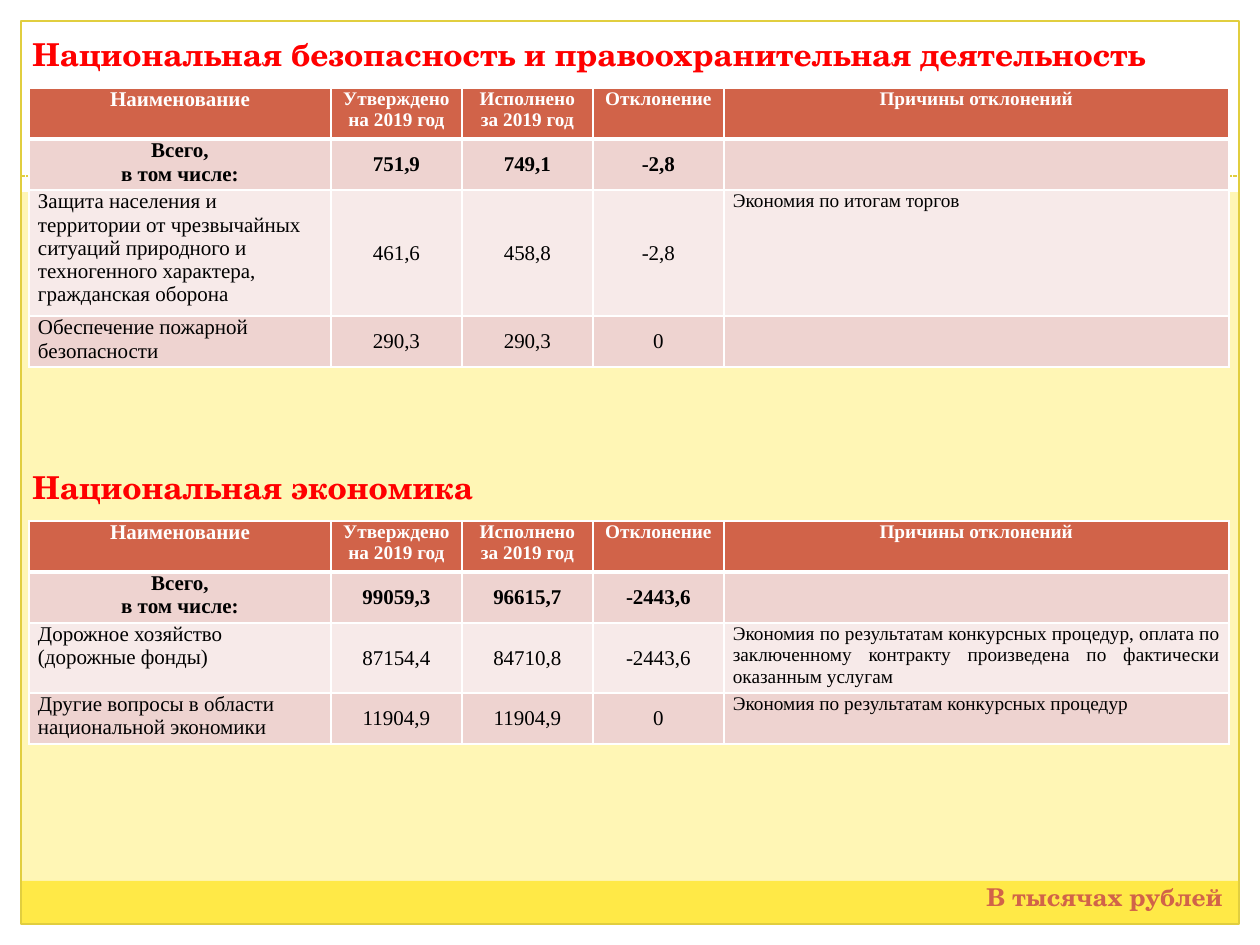
from lxml import etree
from pptx import Presentation, util as u
from pptx.dml.color import RGBColor
from pptx.enum import dml, shapes, text
from pptx.oxml.ns import qn

PX = 914400 // 126
C = {"page": "FFF6B5", "white": "FFFFFF", "band": "FFE947", "frame": "E1CE3F",
     "title": "FF0000", "accent": "D16349", "black": "000000",
     "dark_row": "EED3D0", "light_row": "F7EAE9"}
SERIF, DISPLAY = "Times New Roman", "TeX Gyre Schola"
CENTER, LEFT, JUSTIFY = text.PP_ALIGN.CENTER, text.PP_ALIGN.LEFT, text.PP_ALIGN.JUSTIFY
COLS = [302, 131, 131, 131, 505]
HEADER = ["Наименование", "Утверждено на 2019 год", "Исполнено за 2019 год",
          "Отклонение", "Причины отклонений"]
TOTAL = "Всего,\nв том числе:"

SECURITY = [
    (51, HEADER),
    (51, [TOTAL, "751,9", "749,1", "-2,8", ""]),
    (126, ["Защита населения и территории от чрезвычайных ситуаций природного и "
           "техногенного характера, гражданская оборона",
           "461,6", "458,8", "-2,8", "Экономия по итогам торгов"]),
    (51, ["Обеспечение пожарной безопасности", "290,3", "290,3", "0", ""]),
]
ECONOMY = [
    (51, HEADER),
    (51, [TOTAL, "99059,3", "96615,7", "-2443,6", ""]),
    (70, ["Дорожное хозяйство (дорожные фонды)", "87154,4", "84710,8", "-2443,6",
          "Экономия по результатам конкурсных процедур, оплата по заключенному "
          "контракту произведена по фактически оказанным услугам"]),
    (51, ["Другие вопросы в области национальной экономики", "11904,9", "11904,9", "0",
          "Экономия по результатам конкурсных процедур"]),
]


def rgb(name):
    return RGBColor.from_string(C[name])


def px(*values):
    return [v * PX for v in values]


def set_font(p, name, size, color, bold):
    f = p.font
    f.name, f.size, f.bold = name, u.Pt(size), bold
    f.color.rgb = rgb(color)


def add_rect(s, box, fill=None, line=None):
    sp = s.shapes.add_shape(shapes.MSO_SHAPE.RECTANGLE, *px(*box))
    sp.shadow.inherit = False
    if fill:
        sp.fill.solid()
        sp.fill.fore_color.rgb = rgb(fill)
    else:
        sp.fill.background()
    if line:
        sp.line.color.rgb = rgb(line)
        sp.line.width = u.Pt(0.75)
    else:
        sp.line.fill.background()


def add_label(s, box, words, size, color, wrap):
    tf = s.shapes.add_textbox(*px(*box)).text_frame
    tf.word_wrap = wrap
    tf.text = words
    set_font(tf.paragraphs[0], DISPLAY, size, color, True)


def add_backdrop(s, w, h):
    s.background.fill.solid()
    s.background.fill.fore_color.rgb = rgb("page")
    m = 21
    # White margins and top panel
    for box in [(0, h - m, w, m), (0, 0, w, 192), (0, 0, m, h), (w - m, 0, m, h)]:
        add_rect(s, box, "white")
    # Footer band and frame
    add_rect(s, (m, 881, w - 2 * m, 43), "band")
    add_rect(s, (m, m, w - 2 * m, h - 2 * m), line="frame")
    # Dashed rule
    cx = s.shapes.add_connector(shapes.MSO_CONNECTOR.STRAIGHT, *px(m, 176, w - m, 176))
    cx.line.color.rgb = rgb("frame")
    cx.line.width = u.Pt(0.75)
    cx.line.dash_style = dml.MSO_LINE.SQUARE_DOT
    etree.SubElement(cx._element.spPr, qn("a:effectLst"))


def set_borders(cell, **widths):
    tcPr = cell._tc.get_or_add_tcPr()
    for side in "LRTB":
        ln = etree.SubElement(tcPr, qn("a:ln" + side), w=str(u.Pt(widths.get(side, 1))))
        fill = etree.SubElement(ln, qn("a:solidFill"))
        etree.SubElement(fill, qn("a:srgbClr"), val=C["white"])


def fill_cell(cell, words, row, col):
    header, number = row == 0, 1 <= col <= 3
    set_borders(cell, **{0: {"B": 3}, 1: {"T": 3}}.get(row, {}))
    cell.fill.solid()
    cell.fill.fore_color.rgb = rgb("accent" if header else "dark_row" if row % 2 else "light_row")
    if not words:
        return
    cell.margin_left = cell.margin_right = 9 * PX
    cell.margin_top = cell.margin_bottom = 0
    if number and not header:
        cell.vertical_anchor = text.MSO_ANCHOR.MIDDLE
    cell.text_frame.text = words
    small = col > 0 if header else col == 4
    for p in cell.text_frame.paragraphs:
        p.alignment = CENTER if row < 2 or number else JUSTIFY if col == 4 else LEFT
        set_font(p, SERIF, 11 if small else 12, "white" if header else "black", row < 2)


def add_section(s, x, y, title, rows):
    # Heading
    add_label(s, (x, y, 1164, 50), title, 18, "title", False)
    # Table
    heights = [h for h, _ in rows]
    frame = s.shapes.add_table(len(rows), len(COLS),
                               *px(x + 9, y + 59, sum(COLS), sum(heights)))
    table = frame.table
    for column, width in zip(table.columns, COLS):
        column.width = width * PX
    for i, (height, cells) in enumerate(rows):
        table.rows[i].height = height * PX
        for j, words in enumerate(cells):
            fill_cell(table.cell(i, j), words, i, j)


def main():
    prs = Presentation()
    prs.slide_width, prs.slide_height = u.Inches(10), u.Inches(7.5)
    s = prs.slides.add_slide(prs.slide_layouts[6])
    add_backdrop(s, 1260, 945)
    add_section(s, 20, 29, "Национальная безопасность и правоохранительная деятельность", SECURITY)
    add_section(s, 20, 462, "Национальная экономика", ECONOMY)
    # Units note
    add_label(s, (974, 876, 286, 59), "В тысячах рублей", 14, "accent", True)
    prs.save("out.pptx")


if __name__ == "__main__":
    main()
